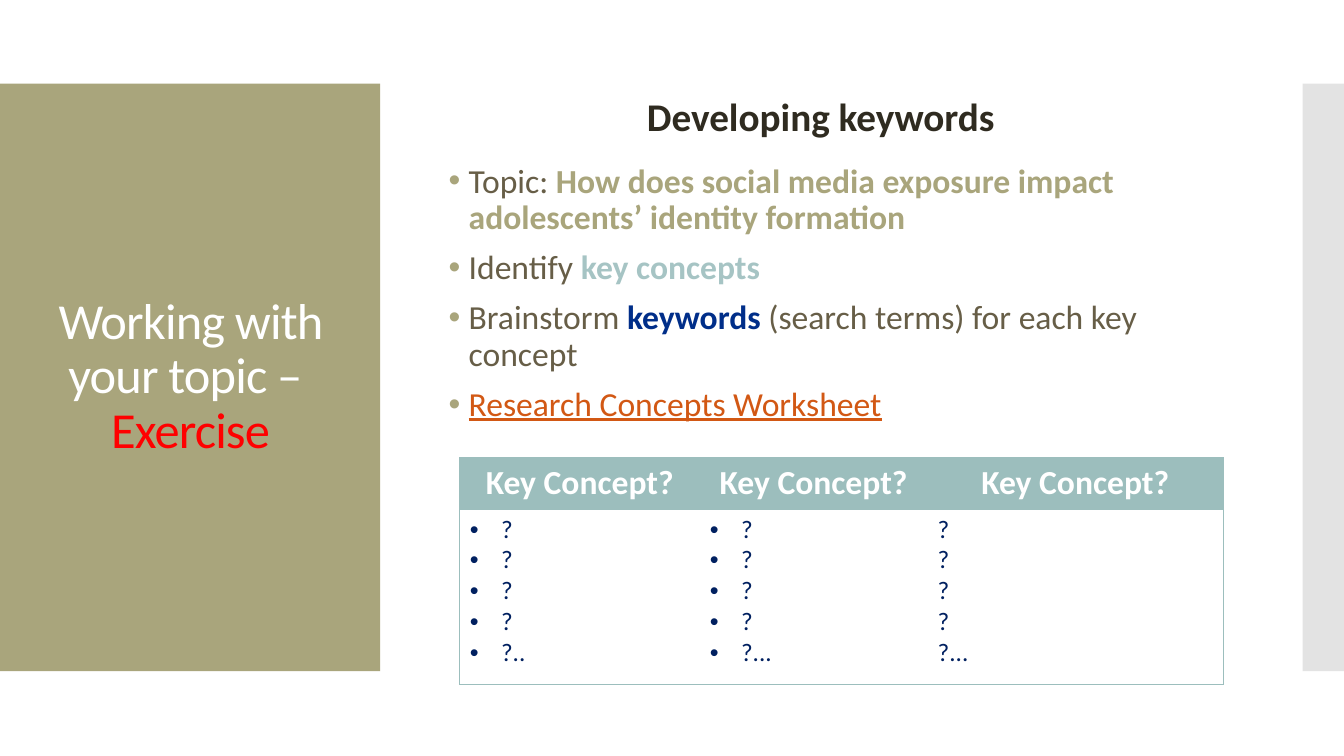
from dataclasses import dataclass

from lxml import etree
from pptx import Presentation
from pptx import util as u
from pptx.dml.color import RGBColor
from pptx.enum import shapes, text
from pptx.oxml import ns

FONT = "Calibri"
WHITE = RGBColor(0xFF, 0xFF, 0xFF)
GREY = RGBColor(0xC8, 0xC8, 0xC8)
OLIVE = RGBColor(0xA9, 0xA5, 0x7C)
BROWN = RGBColor(0x67, 0x5E, 0x47)
DARK = RGBColor(0x2F, 0x2B, 0x20)
RED = RGBColor(0xFF, 0x00, 0x00)
PALE_TEAL = RGBColor(0xA6, 0xC4, 0xC4)
TEAL = RGBColor(0x9C, 0xBE, 0xBD)
BLUE = RGBColor(0x00, 0x2E, 0x89)
NAVY = RGBColor(0x00, 0x20, 0x60)
ORANGE = RGBColor(0xD2, 0x58, 0x14)


@dataclass
class Panel:
    left: float
    width: float
    color: RGBColor
    opacity: int = 100


@dataclass
class Piece:
    words: str
    color: RGBColor
    bold: bool = False
    underline: bool = False


@dataclass
class Column:
    width: float
    last_entry: str
    bulleted: bool = True


PANELS = [Panel(0, 3.77, OLIVE), Panel(12.92, 0.41, GREY, 50)]
BULLETS = [
    [Piece("Topic: ", BROWN),
     Piece("How does social media exposure impact adolescents’ identity formation", OLIVE, True)],
    [Piece("Identify ", BROWN), Piece("key concepts", PALE_TEAL, True)],
    [Piece("Brainstorm ", BROWN), Piece("keywords ", BLUE, True),
     Piece("(search terms) for each key concept", BROWN)],
    [Piece("Research Concepts Worksheet", ORANGE, underline=True)],
]
COLUMNS = [Column(2.38, "?.."), Column(2.26, "?..."), Column(2.93, "?...", False)]
ROW_HEIGHTS = [0.51, 1.74]


def add_panel(slide, panel: Panel) -> None:
    shape = slide.shapes.add_shape(
        shapes.MSO_SHAPE.RECTANGLE, u.Inches(panel.left), u.Inches(0.83),
        u.Inches(panel.width), u.Inches(5.83))
    shape.shadow.inherit = False
    shape.line.fill.background()
    shape.fill.solid()
    shape.fill.fore_color.rgb = panel.color
    if panel.opacity < 100:
        color = shape.fill._xPr.find(".//" + ns.qn("a:srgbClr"))
        etree.SubElement(color, ns.qn("a:alpha"), val=str(panel.opacity * 1000))


def add_text_frame(slide, left: float, top: float, width: float, height: float,
                   anchor=text.MSO_ANCHOR.MIDDLE):
    frame = slide.shapes.add_textbox(*map(u.Inches, (left, top, width, height))).text_frame
    frame.word_wrap = True
    frame.vertical_anchor = anchor
    return frame


def set_font(paragraph, size: float, color: RGBColor | None = None, bold: bool = False) -> None:
    font = paragraph.font
    font.name, font.size, font.bold = FONT, u.Pt(size), bold
    if color is not None:
        font.color.rgb = color


def add_piece(paragraph, piece: Piece):
    run = paragraph.add_run()
    run.text = piece.words
    run.font.color.rgb = piece.color
    run.font.bold = piece.bold
    run.font.underline = piece.underline
    return run


def add_bullet(paragraph, indent: float, color: RGBColor) -> None:
    properties = paragraph._p.get_or_add_pPr()
    properties.set("marL", str(u.Inches(indent)))
    properties.set("indent", str(-u.Inches(indent)))
    bullet_color = etree.Element(ns.qn("a:buClr"))
    etree.SubElement(bullet_color, ns.qn("a:srgbClr"), val=str(color))
    bullet_font = etree.Element(ns.qn("a:buFont"), typeface="Arial")
    bullet = etree.Element(ns.qn("a:buChar"), char="•")
    # Bullet elements come after spacing and before default run properties
    defaults = properties.find(ns.qn("a:defRPr"))
    for element in (bullet_color, bullet_font, bullet):
        defaults.addprevious(element)


def set_borders(cell, drawn_sides: str) -> None:
    properties = cell._tc.get_or_add_tcPr()
    for side in "LRTB":
        line = etree.SubElement(properties, ns.qn(f"a:ln{side}"), w=str(u.Pt(0.75)))
        if side in drawn_sides:
            fill = etree.SubElement(line, ns.qn("a:solidFill"))
            etree.SubElement(fill, ns.qn("a:srgbClr"), val=str(TEAL))
        else:
            etree.SubElement(line, ns.qn("a:noFill"))


def add_title(slide) -> None:
    paragraph = add_text_frame(slide, 0.28, 1.23, 3.22, 5.03).paragraphs[0]
    paragraph.alignment = text.PP_ALIGN.CENTER
    paragraph.line_spacing = 0.9
    set_font(paragraph, 36)
    topic = add_piece(paragraph, Piece("Working with your topic – ", WHITE))
    paragraph.add_line_break()
    exercise = add_piece(paragraph, Piece("Exercise", RED))
    for run in (topic, exercise):
        run._r.get_or_add_rPr().set("spc", "-60")


def add_body(slide) -> None:
    heading = add_text_frame(slide, 5.36, 0.92, 5.56, 0.59, text.MSO_ANCHOR.TOP).paragraphs[0]
    heading.text = "Developing keywords"
    heading.alignment = text.PP_ALIGN.CENTER
    heading.line_spacing = 0.9
    set_font(heading, 28, DARK, True)

    frame = add_text_frame(slide, 4.35, 1.84, 7.59, 2.15)
    for index, pieces in enumerate(BULLETS):
        paragraph = frame.add_paragraph() if index else frame.paragraphs[0]
        paragraph.line_spacing = 0.9
        paragraph.space_before = u.Pt(10)
        set_font(paragraph, 24)
        add_bullet(paragraph, 0.2, OLIVE)
        for piece in pieces:
            add_piece(paragraph, piece)


def add_concept_table(slide) -> None:
    width = sum(column.width for column in COLUMNS)
    table = slide.shapes.add_table(
        len(ROW_HEIGHTS), len(COLUMNS), u.Inches(4.56), u.Inches(4.54),
        u.Inches(width), u.Inches(sum(ROW_HEIGHTS))).table
    table.horz_banding = False
    for row, height in zip(table.rows, ROW_HEIGHTS):
        row.height = u.Inches(height)

    for index, column in enumerate(COLUMNS):
        table.columns[index].width = u.Inches(column.width)
        outer = {0: "L", len(COLUMNS) - 1: "R"}.get(index, "")
        header, body = table.cell(0, index), table.cell(1, index)
        set_borders(header, outer + "TB")
        set_borders(body, outer + "TB")

        # Header cell
        header.fill.solid()
        header.fill.fore_color.rgb = TEAL
        header.text = "Key Concept?"
        paragraph = header.text_frame.paragraphs[0]
        paragraph.alignment = text.PP_ALIGN.CENTER
        set_font(paragraph, 24, WHITE, True)

        # Entries
        body.fill.background()
        body.text = "\n".join(["?"] * 4 + [column.last_entry])
        for paragraph in body.text_frame.paragraphs:
            set_font(paragraph, 18, NAVY)
            if column.bulleted:
                add_bullet(paragraph, 0.31, NAVY)


def main() -> None:
    presentation = Presentation()
    presentation.slide_width = u.Inches(13.33)
    presentation.slide_height = u.Inches(7.5)
    slide = presentation.slides.add_slide(presentation.slide_layouts[6])
    for panel in PANELS:
        add_panel(slide, panel)
    add_title(slide)
    add_body(slide)
    add_concept_table(slide)
    presentation.save("out.pptx")


if __name__ == "__main__":
    main()
